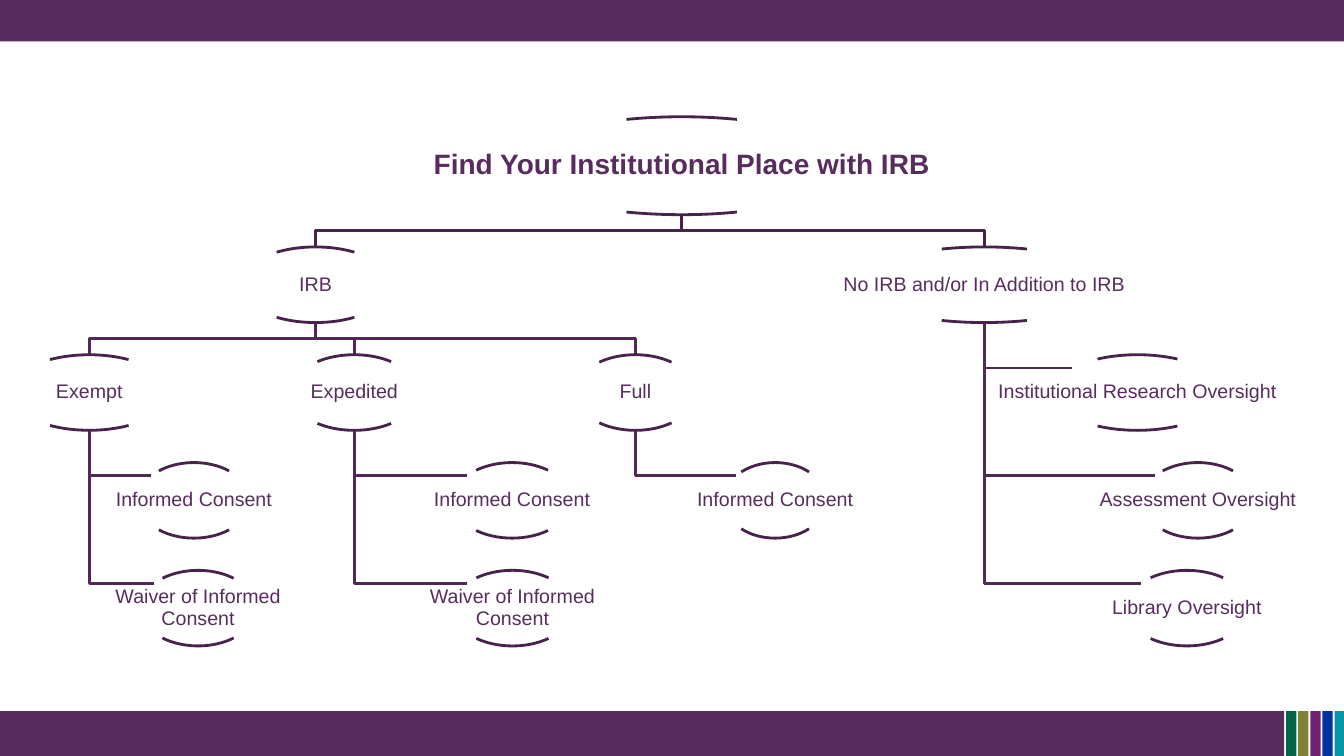
"""Build a slide with a decision tree for finding an institutional place with IRB."""
from dataclasses import dataclass

from pptx import Presentation
from pptx.dml.color import RGBColor
from pptx.enum.shapes import MSO_SHAPE
from pptx.enum.text import MSO_ANCHOR, MSO_AUTO_SIZE, PP_ALIGN
from pptx.shapes.autoshape import Shape
from pptx.slide import Slide
from pptx.util import Pt

PLUM = "592C5F"
DARK = "47234C"
MID = "512856"
STRIPES = ["006647", "7E8034", "712177", "0033A0", "0996A9"]
GAP = 23
ROW = 54
FIRST = 83.4
HEAD = 70
UPPER = (132, 192)
LOWER = (24, 84)


@dataclass(frozen=True)
class Node:
    """A label between two arcs, with the nodes below it."""

    text: str
    mid: float
    width: float
    kids: tuple["Node", ...] = ()

    @property
    def left(self) -> float:
        """Return the left edge of the arcs."""
        return self.mid - self.width / 2


EXEMPT = Node("Exempt", 63.8, 114.5, (
    Node("Informed Consent", 138.6, 80),
    Node("Waiver of Informed Consent", 141.5, 82.8),
))
SWIFT = Node("Expedited", 253.1, 91.4, (
    Node("Informed Consent", 365.8, 85),
    Node("Waiver of Informed Consent", 366.1, 86),
))
FULL = Node("Full", 453.9, 86.4, (
    Node("Informed Consent", 553.7, 73.4),
))
OTHER = Node("No IRB and/or In Addition to IRB", 703.1, 185.3, (
    Node("Institutional Research Oversight", 812.5, 123),
    Node("Assessment Oversight", 855.7, 80),
    Node("Library Oversight", 847.8, 87.1),
))
ROOT = Node("Find Your Institutional Place with IRB", 487, 242.6, (
    Node("IRB", 225.4, 109.4, (EXEMPT, SWIFT, FULL)),
    OTHER,
))


def paint(code: str) -> RGBColor:
    """Return the colour for a hex string."""
    return RGBColor.from_string(code)


def add_bar(slide: Slide, left: float, top: float, width: float,
            height: float, code: str) -> None:
    """Draw a plain filled bar."""
    bar = slide.shapes.add_shape(
        MSO_SHAPE.RECTANGLE, Pt(left), Pt(top), Pt(width), Pt(height))
    bar.shadow.inherit = False
    bar.fill.solid()
    bar.fill.fore_color.rgb = paint(code)
    bar.line.fill.background()


def stroke(shape: Shape, code: str) -> None:
    """Give a shape a bare outline."""
    shape.shadow.inherit = False
    shape.fill.background()
    shape.line.color.rgb = paint(code)
    shape.line.width = Pt(2)


def add_link(slide: Slide, points: list[tuple[float, float]], code: str) -> None:
    """Draw an open bent line through the points."""
    start, *rest = [(Pt(x), Pt(y)) for x, y in points]
    pen = slide.shapes.build_freeform(*start)
    pen.add_line_segments(rest, close=False)
    stroke(pen.convert_to_shape(), code)


def add_label(slide: Slide, node: Node, top: float, height: float,
              head: bool) -> None:
    """Write the text of a node, in the title placeholder for the head."""
    if head:
        box = slide.shapes.title
    else:
        box = slide.shapes.add_textbox(0, 0, 0, 0)
    box.left, box.top = Pt(node.mid - node.width), Pt(top)
    box.width, box.height = Pt(2 * node.width), Pt(height)
    frame = box.text_frame
    frame.text = node.text
    frame.word_wrap = True
    frame.auto_size = MSO_AUTO_SIZE.NONE
    frame.vertical_anchor = MSO_ANCHOR.MIDDLE
    frame.margin_left = frame.margin_right = Pt(0.7)
    frame.margin_top = frame.margin_bottom = Pt(0.7)
    line = frame.paragraphs[0]
    line.alignment = PP_ALIGN.CENTER
    line.line_spacing = 0.9
    font = line.runs[0].font
    font.name = "Arial"
    font.size = Pt(20 if head else 14)
    font.bold = head
    font.color.rgb = paint(PLUM)


def add_node(slide: Slide, node: Node, top: float, head: bool = False) -> None:
    """Draw a node, its links and all nodes below it."""
    height = HEAD if head else ROW
    base = top + height
    hang = not any(kid.kids for kid in node.kids)
    for rank, kid in enumerate(node.kids):
        high = base + GAP + (rank * (ROW + GAP) if hang else 0)
        if hang:
            turn = high + 9.4
            ends = [(node.mid, turn), (kid.left + 0.12 * kid.width, turn)]
        else:
            turn = base + GAP / 2
            ends = [(node.mid, turn), (kid.mid, turn), (kid.mid, high)]
        add_link(slide, [(node.mid, base), *ends], DARK if head else MID)
        add_node(slide, kid, high)
    for angles in (UPPER, LOWER):
        arc = slide.shapes.add_shape(
            MSO_SHAPE.ARC, Pt(node.left), Pt(top), Pt(node.width), Pt(height))
        arc.adjustments[0], arc.adjustments[1] = angles
        stroke(arc, DARK)
    inset = 12.5 if head else 9.4
    add_label(slide, node, top + inset, height - 2 * inset, head)


def main() -> None:
    """Build and save the slide."""
    deck = Presentation()
    deck.slide_width, deck.slide_height = Pt(960), Pt(540)
    slide = deck.slides.add_slide(deck.slide_layouts[5])
    add_bar(slide, 0, 0, 960, 29.5, PLUM)
    add_bar(slide, 0, 508, 917.3, 32, PLUM)
    for rank, code in enumerate(STRIPES):
        add_bar(slide, 918.7 + 8.65 * rank, 508, 7.3, 32, code)
    add_node(slide, ROOT, FIRST, head=True)
    deck.save("out.pptx")


if __name__ == "__main__":
    main()
